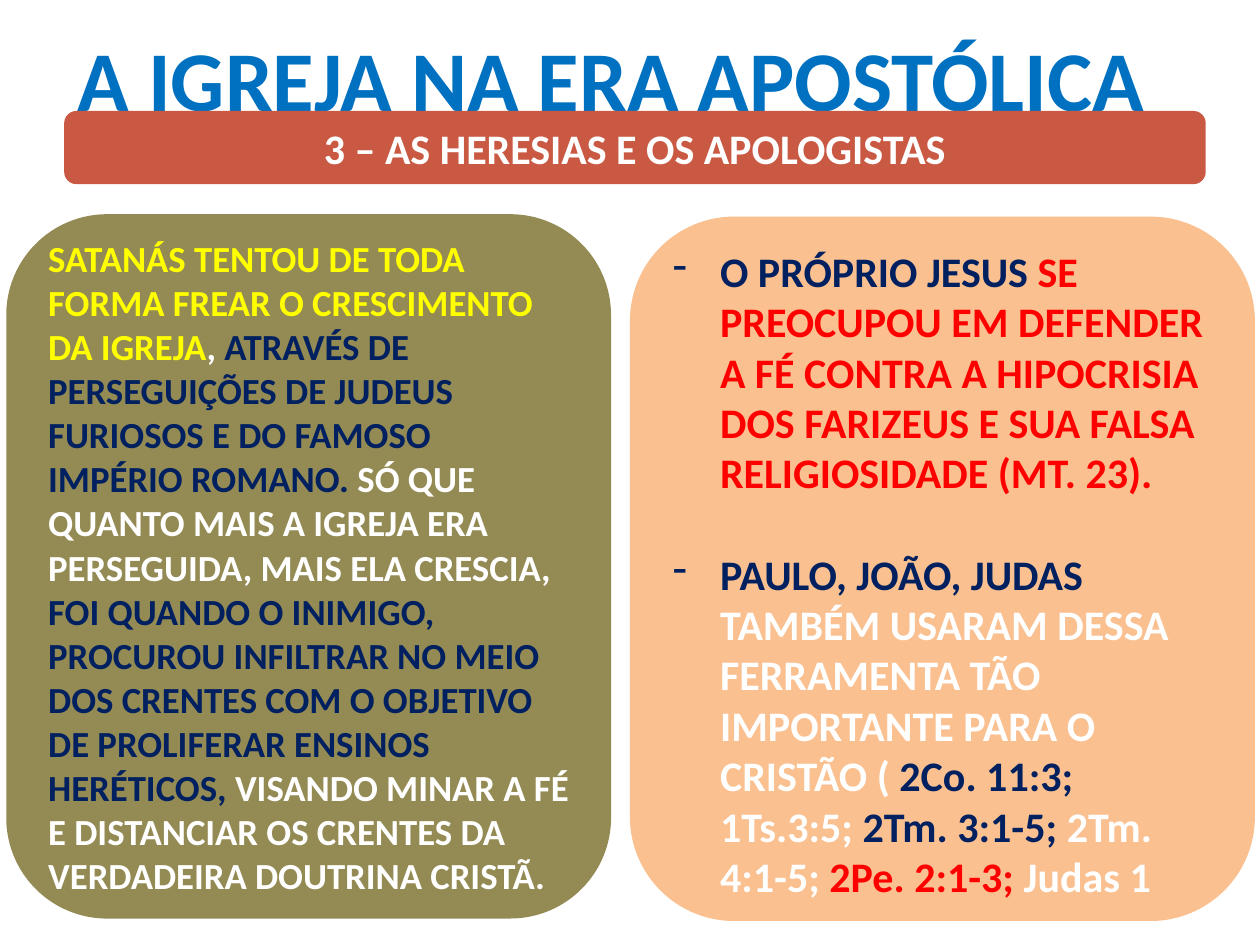
from dataclasses import dataclass

from lxml.etree import SubElement
from pptx import Presentation
from pptx.dml.color import RGBColor as Rgb
from pptx.enum.shapes import MSO_SHAPE as Kind
from pptx.enum.text import MSO_ANCHOR as Anchor, PP_ALIGN as Align
from pptx.oxml.ns import qn
from pptx.util import Pt


@dataclass(frozen=True)
class Theme:
    font: str = "Calibri"
    blue: str = "0070C0"
    navy: str = "002060"
    white: str = "FFFFFF"
    yellow: str = "FFFF00"
    red: str = "FF0000"
    brick: str = "C95943"
    olive: str = "948A54"
    peach: str = "FAC090"
    title: float = 48.6
    head: float = 24
    body: float = 21


T = Theme()

STORY = [
    ("SATANÁS TENTOU DE TODA FORMA FREAR O CRESCIMENTO DA IGREJA", T.yellow),
    (", ", T.white),
    ("ATRAVÉS DE PERSEGUIÇÕES DE JUDEUS FURIOSOS E DO FAMOSO IMPÉRIO ROMANO. ", T.navy),
    ("SÓ QUE QUANTO MAIS A IGREJA ERA PERSEGUIDA, MAIS ELA CRESCIA, ", T.white),
    ("FOI QUANDO O INIMIGO, PROCUROU INFILTRAR NO MEIO DOS CRENTES COM O "
     "OBJETIVO DE PROLIFERAR ENSINOS HERÉTICOS,", T.navy),
    (" VISANDO MINAR A FÉ E DISTANCIAR OS CRENTES DA VERDADEIRA DOUTRINA CRISTÃ.", T.white),
]
POINTS = [
    [
        ("O PRÓPRIO JESUS ", T.navy),
        ("SE PREOCUPOU EM DEFENDER A FÉ CONTRA A HIPOCRISIA DOS FARIZEUS E SUA "
         "FALSA RELIGIOSIDADE (MT. 23).", T.red),
    ],
    [
        ("PAULO, JOÃO, JUDAS ", T.navy),
        ("TAMBÉM USARAM DESSA FERRAMENTA TÃO IMPORTANTE PARA O CRISTÃO ( ", T.white),
        ("2Co. 11:3; ", T.navy),
        ("1Ts.3:5; ", T.white),
        ("2Tm. 3:1-5; ", T.navy),
        ("2Tm. 4:1-5; ", T.white),
        ("2Pe. 2:1-3; ", T.red),
        ("Judas 1", T.white),
    ],
]


def write(para, runs, size, align=Align.LEFT):
    para.alignment = align
    for text, color in runs:
        run = para.add_run()
        run.text = text
        font = run.font
        font.name, font.size, font.bold = T.font, Pt(size), True
        font.color.rgb = Rgb.from_string(color)


def dash(para, indent):
    props = para._p.get_or_add_pPr()
    props.set("marL", str(Pt(indent)))
    props.set("indent", str(-Pt(indent)))
    SubElement(props, qn("a:buFontTx"))
    SubElement(props, qn("a:buChar")).set("char", "-")


def panel(slide, box, fill):
    shape = slide.shapes.add_shape(Kind.ROUNDED_RECTANGLE, *map(Pt, box))
    shape.shadow.inherit = False
    shape.fill.solid()
    shape.fill.fore_color.rgb = Rgb.from_string(fill)
    shape.line.fill.background()
    frame = shape.text_frame
    frame.word_wrap = True
    frame.vertical_anchor = Anchor.MIDDLE
    return frame


def title(slide, box):
    frame = slide.shapes.add_textbox(*map(Pt, box)).text_frame
    frame.word_wrap = True
    frame.margin_top = Pt(5.5)
    write(frame.paragraphs[0], [("A IGREJA NA ERA APOSTÓLICA", T.blue)],
          T.title, Align.CENTER)


def banner(slide, box):
    frame = panel(slide, box, T.brick)
    write(frame.paragraphs[0], [("3 – AS HERESIAS E OS APOLOGISTAS", T.white)],
          T.head, Align.CENTER)


def story(slide, box):
    frame = panel(slide, box, T.olive)
    write(frame.paragraphs[0], STORY, T.body)


def points(slide, box):
    frame = panel(slide, box, T.peach)
    frame.margin_top = Pt(8.4)
    for i, runs in enumerate(POINTS):
        para = frame.add_paragraph() if i else frame.paragraphs[0]
        dash(para, 27)
        if i:
            para.space_before = Pt(29)
        write(para, runs, T.head)


def main():
    deck = Presentation()
    deck.slide_width, deck.slide_height = Pt(720), Pt(540)
    slide = deck.slides.add_slide(deck.slide_layouts[6])
    title(slide, (25.2, 9.4, 648, 54.7))
    banner(slide, (36.7, 63.4, 652.3, 41.8))
    story(slide, (3.6, 122.4, 345.6, 402.5))
    points(slide, (360, 123.8, 357.1, 402.5))
    deck.save("out.pptx")


if __name__ == "__main__":
    main()
